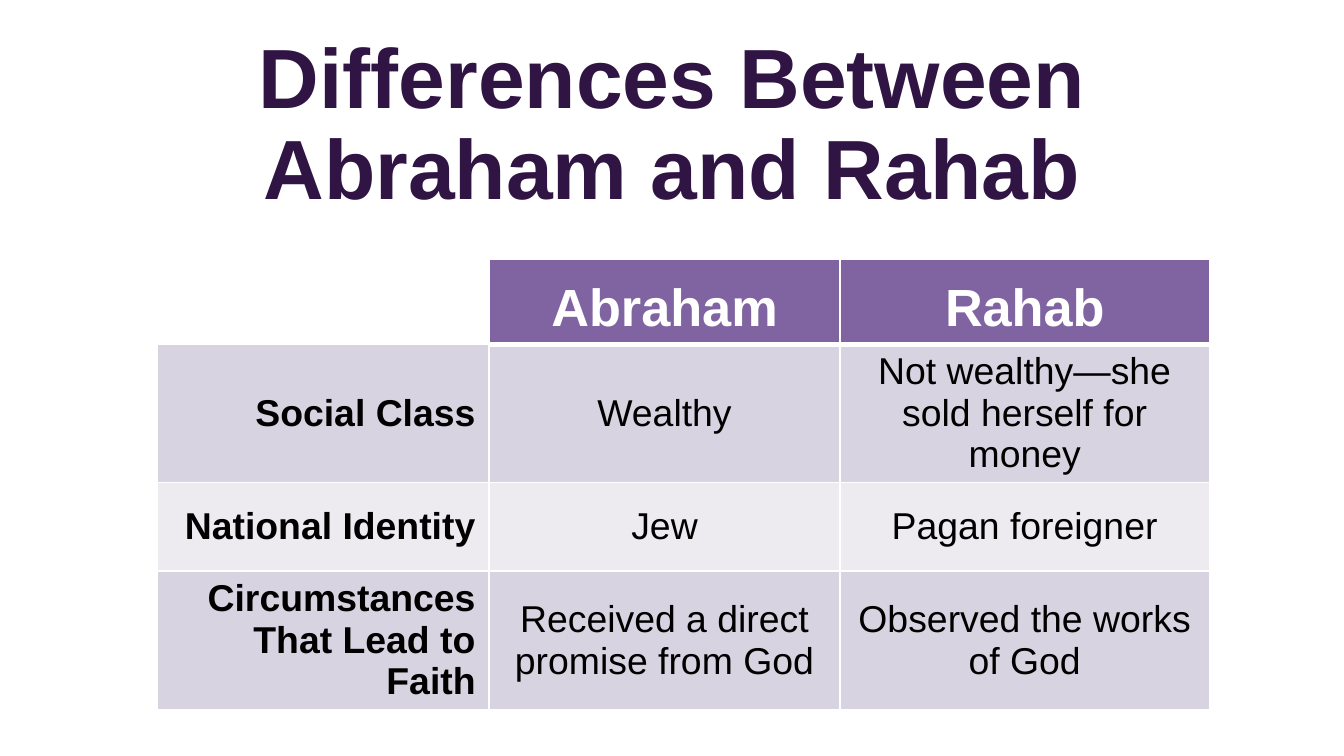
from dataclasses import dataclass

import pptx
import pptx.dml.color
import pptx.enum.text
import pptx.oxml
import pptx.oxml.ns
import pptx.table
import pptx.text.text
import pptx.util
from pptx.util import Inches

ALIGN = pptx.enum.text.PP_ALIGN
ANCHOR = pptx.enum.text.MSO_ANCHOR
FONT = "Arial"
COLORS = {
    "title": "2F1444",
    "header": "8064A2",
    "dark_band": "D8D3E0",
    "light_band": "EDEAF0",
    "white": "FFFFFF",
    "black": "000000",
}


@dataclass
class CellStyle:
    fill: str
    color: str
    size: float
    bold: bool
    align: ALIGN
    anchor: ANCHOR = ANCHOR.MIDDLE


@dataclass
class Comparison:
    label: str
    abraham: str
    rahab: str
    height: float


HEADER = Comparison("", "Abraham", "Rahab", 0.63)
COMPARISONS = [
    Comparison("Social Class", "Wealthy", "Not wealthy—she sold herself for money", 0.92),
    Comparison("National Identity", "Jew", "Pagan foreigner", 0.66),
    Comparison("Circumstances That Lead to Faith", "Received a direct promise from God",
               "Observed the works of God", 0.84),
]
COLUMN_WIDTHS = [2.47, 2.61, 2.75]


def rgb(name: str) -> pptx.dml.color.RGBColor:
    return pptx.dml.color.RGBColor.from_string(COLORS[name])


def add_run(paragraph: pptx.text.text._Paragraph, text: str, size: float,
            color: str, bold: bool) -> None:
    run = paragraph.add_run()
    run.text = text
    run.font.name = FONT
    run.font.size = pptx.util.Pt(size)
    run.font.bold = bold
    run.font.color.rgb = rgb(color)


def add_borders(cell: pptx.table._Cell, widths: dict[str, float]) -> None:
    """Draw white borders; widths in points are keyed L, R, T, B in that order."""
    properties = cell._tc.get_or_add_tcPr()
    for side, width in widths.items():
        properties.append(pptx.oxml.parse_xml(
            f'<a:ln{side} {pptx.oxml.ns.nsdecls("a")} w="{pptx.util.Pt(width)}">'
            f'<a:solidFill><a:srgbClr val="{COLORS["white"]}"/></a:solidFill></a:ln{side}>'))


def fill_cell(cell: pptx.table._Cell, text: str, style: CellStyle,
              top: float, bottom: float) -> None:
    add_borders(cell, {"L": 1, "R": 1, "T": top, "B": bottom})
    cell.fill.solid()
    cell.fill.fore_color.rgb = rgb(style.fill)
    cell.vertical_anchor = style.anchor
    paragraph = cell.text_frame.paragraphs[0]
    paragraph.alignment = style.align
    add_run(paragraph, text, style.size, style.color, style.bold)


def add_title(slide) -> None:
    title = slide.shapes.title
    title.left, title.top = Inches(0.5), Inches(0.36)
    title.width, title.height = Inches(9), Inches(1.17)
    title.text_frame.vertical_anchor = ANCHOR.MIDDLE
    paragraph = title.text_frame.paragraphs[0]
    paragraph.alignment = ALIGN.CENTER
    paragraph.line_spacing = 0.9
    add_run(paragraph, "Differences Between Abraham and Rahab", 45, "title", True)


def add_comparison_table(slide) -> None:
    rows = [HEADER, *COMPARISONS]
    table = slide.shapes.add_table(
        len(rows), len(COLUMN_WIDTHS), Inches(1.17), Inches(1.93),
        Inches(sum(COLUMN_WIDTHS)), Inches(sum(row.height for row in rows))).table
    table.first_col = True
    for column, width in zip(table.columns, COLUMN_WIDTHS):
        column.width = Inches(width)
    for row, comparison in zip(table.rows, rows):
        row.height = Inches(comparison.height)

    table.cell(0, 0).fill.background()
    header_style = CellStyle("header", "white", 28, True, ALIGN.CENTER, ANCHOR.BOTTOM)
    for column, name in enumerate([HEADER.abraham, HEADER.rahab], 1):
        fill_cell(table.cell(0, column), name, header_style, top=1, bottom=3)

    for row, comparison in enumerate(COMPARISONS, 1):
        band = "dark_band" if row % 2 else "light_band"
        label_style = CellStyle(band, "black", 20, True, ALIGN.RIGHT)
        answer_style = CellStyle(band, "black", 20, False, ALIGN.CENTER)
        answer_top = 3 if row == 1 else 1
        fill_cell(table.cell(row, 0), comparison.label, label_style, top=1, bottom=1)
        for column, answer in enumerate([comparison.abraham, comparison.rahab], 1):
            fill_cell(table.cell(row, column), answer, answer_style, answer_top, bottom=1)


def main() -> None:
    presentation = pptx.Presentation()
    presentation.slide_width = Inches(10)
    presentation.slide_height = presentation.slide_width * 9 // 16
    slide = presentation.slides.add_slide(presentation.slide_layouts[5])
    add_title(slide)
    add_comparison_table(slide)
    presentation.save("out.pptx")


if __name__ == "__main__":
    main()
